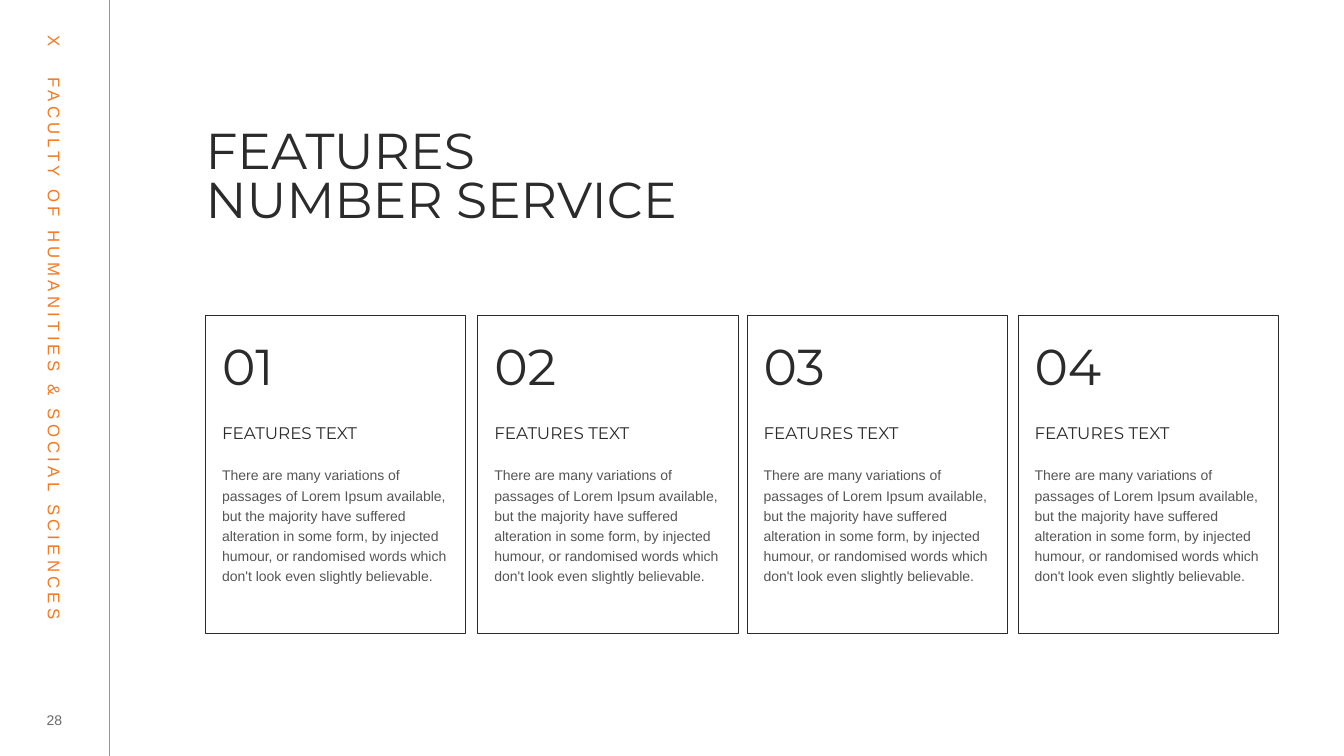
from pptx import Presentation
from pptx.dml.color import RGBColor
from pptx.enum.shapes import MSO_CONNECTOR as Connector, MSO_SHAPE as Shape
from pptx.enum.text import MSO_ANCHOR as Anchor, MSO_AUTO_SIZE as AutoSize, PP_ALIGN as Align
from pptx.oxml.ns import qn
from pptx.util import Pt
from lxml.etree import SubElement

INK, ORANGE = "2B2B2B", "F47A21"
CARD_LEFTS = (146.9, 341.3, 533.6, 727.2)
CARD_TOP, CARD_WIDTH, CARD_HEIGHT = 225.4, 185.8, 226.8
CARD_PADDING, CARD_TEXT_WIDTH = 11.8, 162.7
BODY = (
    "There are many variations of passages of Lorem Ipsum available, but the majority "
    "have suffered alteration in some form, by injected humour, or randomised words "
    "which don't look even slightly believable."
)


def color(value):
    return RGBColor.from_string(value)


class FeaturePage:
    heading_font, text_font = "Montserrat", "Arial"
    line_width = 0.5

    def __init__(self, page):
        self.page = page

    def fill_text(self, box, text, size, font, ink=INK, spacing=1.0, alpha=None,
                  align=Align.LEFT, anchor=Anchor.TOP, insets=(0, 3.6, 0, 3.6),
                  auto_size=AutoSize.NONE):
        """Set the text of a box as one paragraph and return that paragraph."""
        frame = box.text_frame
        frame.word_wrap = True
        frame.auto_size = auto_size
        frame.vertical_anchor = anchor
        (frame.margin_left, frame.margin_top,
         frame.margin_right, frame.margin_bottom) = map(Pt, insets)
        frame.text = text
        para = frame.paragraphs[0]
        para.alignment = align
        para.line_spacing = spacing
        para.font.name = font
        para.font.size = Pt(size)
        para.font.color.rgb = color(ink)
        if alpha:
            tint = para._p.pPr.find(".//" + qn("a:srgbClr"))
            SubElement(tint, qn("a:alpha"), val=str(alpha * 1000))
        return para

    def title(self, text, left, top, width, height):
        box = self.page.shapes.title
        box.left, box.top, box.width, box.height = map(Pt, (left, top, width, height))
        self.fill_text(box, text, 36, self.heading_font, spacing=0.8, insets=(0, 15.1, 0, 0))

    def text(self, text, left, top, width, height, size, font, **style):
        box = self.page.shapes.add_textbox(*map(Pt, (left, top, width, height)))
        self.fill_text(box, text, size, font, **style)
        return box

    def rule(self, x, bottom):
        line = self.page.shapes.add_connector(Connector.STRAIGHT, Pt(x), 0, Pt(x), Pt(bottom))
        line.line.color.rgb = color(ORANGE)
        line.line.width = Pt(self.line_width)
        SubElement(line._element.spPr, qn("a:effectLst"))

    def side_label(self, mark, label):
        """Draw the vertical label, with a tab stop between the mark and the words."""
        box = self.text(f"{mark}\t{label}", -195.8, 241.9, 469.4, 21.6, 12, self.text_font,
                        ink=ORANGE, insets=(7.2, 3.6, 7.2, 3.6),
                        auto_size=AutoSize.SHAPE_TO_FIT_TEXT)
        box.rotation = 90
        properties = box.text_frame.paragraphs[0]._p.pPr
        defaults = properties.find(qn("a:defRPr"))
        defaults.set("spc", "300")
        tabs = SubElement(properties, qn("a:tabLst"))
        SubElement(tabs, qn("a:tab"), pos=str(Pt(30)), algn="l")
        defaults.addprevious(tabs)

    def card(self, left, number, heading, body):
        frame = self.page.shapes.add_shape(
            Shape.RECTANGLE, *map(Pt, (left, CARD_TOP, CARD_WIDTH, CARD_HEIGHT)))
        frame.shadow.inherit = False
        frame.fill.background()
        frame.line.color.rgb = color(INK)
        frame.line.width = Pt(self.line_width)
        rows = (
            (number, 247.7, 41, 36, self.heading_font, 0.7, None),
            (heading, 302.4, 18.7, 12, self.heading_font, 0.7, None),
            (body, 327.6, 108.7, 10, self.text_font, 1.2, 80),
        )
        for text, top, height, size, font, spacing, alpha in rows:
            self.text(text, left + CARD_PADDING, top, CARD_TEXT_WIDTH, height, size, font,
                      spacing=spacing, alpha=alpha, auto_size=AutoSize.SHAPE_TO_FIT_TEXT)


def main():
    deck = Presentation()
    deck.slide_width, deck.slide_height = Pt(960), Pt(540)
    slide = FeaturePage(deck.slides.add_slide(deck.slide_layouts[5]))
    slide.rule(77.8, 540)
    slide.side_label("X", "FACULTY OF HUMANITIES & SOCIAL SCIENCES")
    slide.text("28", 18.7, 505.4, 40.3, 18, 10, slide.text_font, alpha=70,
               align=Align.CENTER, anchor=Anchor.MIDDLE, insets=(0, 0, 0, 0))
    slide.title("FEATURES\vNUMBER SERVICE", 146.9, 78.5, 612.7, 127.4)
    for index, left in enumerate(CARD_LEFTS, start=1):
        slide.card(left, f"{index:02}", "FEATURES TEXT", BODY)
    deck.save("out.pptx")


if __name__ == "__main__":
    main()
